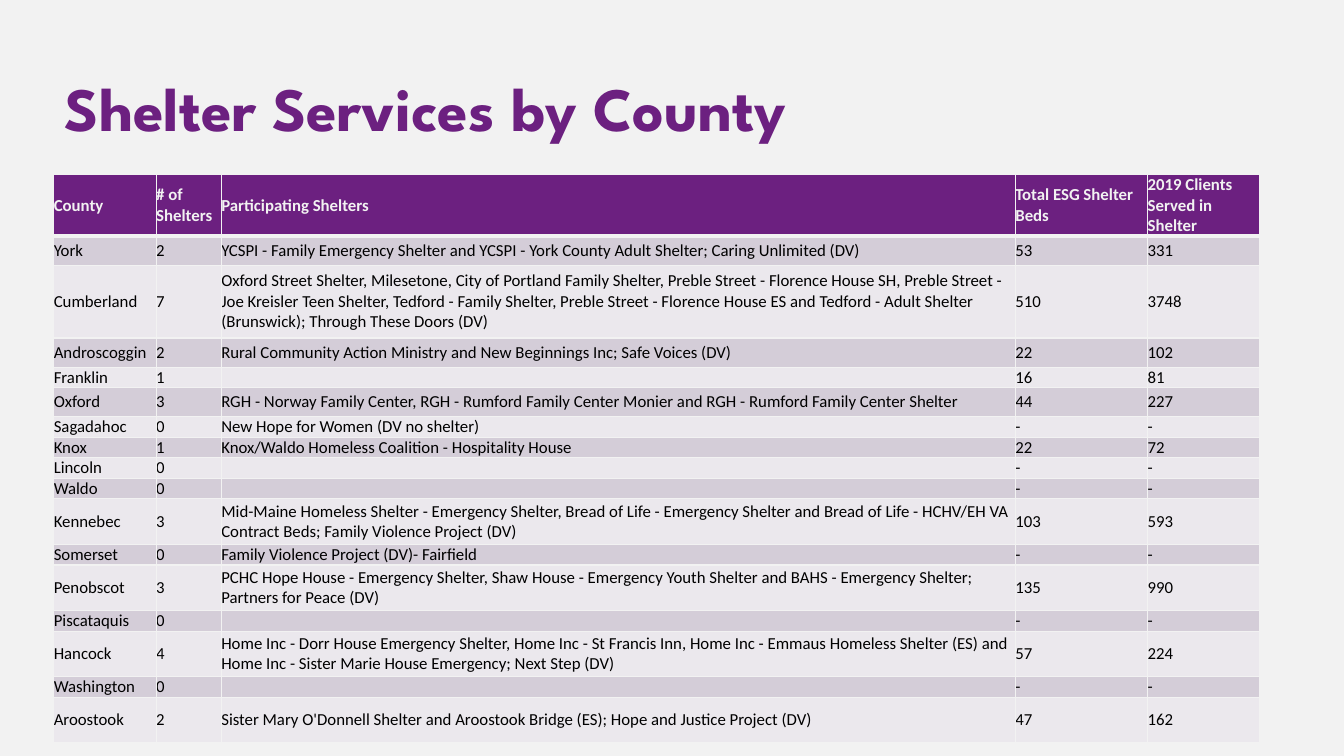
"""Build the slide with the table of shelter services by county."""
from lxml.etree import SubElement as Sub
from pptx import Presentation
from pptx.dml.color import RGBColor as Rgb
from pptx.enum.text import MSO_ANCHOR as Anchor, MSO_AUTO_SIZE as Fit, PP_ALIGN as Align
from pptx.oxml.ns import qn
from pptx.util import Pt

HUES = {"page": "F2F2F2", "plum": "6C2080", "dark": "D4CDD8", "pale": "EBE8ED", "ink": "000000"}
WIDTHS = [73.2, 46.5, 567.2, 94.5, 79.8]
LINE, MID, PAIR = 14.4, 20.8, 32.6
ROWS = [
    (43, "County", "# of Shelters", "Participating Shelters", "Total ESG Shelter Beds",
     "2019 Clients Served in Shelter"),
    (MID, "York", "2", "YCSPI - Family Emergency Shelter and YCSPI - York County Adult Shelter; "
     "Caring Unlimited (DV)", "53", "331"),
    (52, "Cumberland", "7", "Oxford Street Shelter, Milesetone, City of Portland Family Shelter, "
     "Preble Street - Florence House SH, Preble Street - Joe Kreisler Teen Shelter, "
     "Tedford - Family Shelter, Preble Street - Florence House ES and "
     "Tedford - Adult Shelter (Brunswick); Through These Doors (DV)", "510", "3748"),
    (MID, "Androscoggin", "2", "Rural Community Action Ministry and New Beginnings Inc; "
     "Safe Voices (DV)", "22", "102"),
    (LINE, "Franklin", "1", "", "16", "81"),
    (MID, "Oxford", "3", "RGH - Norway Family Center, RGH - Rumford Family Center Monier and "
     "RGH - Rumford Family Center Shelter", "44", "227"),
    (LINE, "Sagadahoc", "0", "New Hope for Women (DV no shelter)", "-", "-"),
    (LINE, "Knox", "1", "Knox/Waldo Homeless Coalition - Hospitality House", "22", "72"),
    (LINE, "Lincoln", "0", "", "-", "-"),
    (LINE, "Waldo", "0", "", "-", "-"),
    (PAIR, "Kennebec", "3", "Mid-Maine Homeless Shelter - Emergency Shelter, "
     "Bread of Life - Emergency Shelter and Bread of Life - HCHV/EH VA Contract Beds; "
     "Family Violence Project (DV)", "103", "593"),
    (LINE, "Somerset", "0", "Family Violence Project (DV)- Fairfield", "-", "-"),
    (PAIR, "Penobscot", "3", "PCHC Hope House - Emergency Shelter, "
     "Shaw House - Emergency Youth Shelter and BAHS - Emergency Shelter; "
     "Partners for Peace (DV)", "135", "990"),
    (LINE, "Piscataquis", "0", "", "-", "-"),
    (PAIR, "Hancock", "4", "Home Inc - Dorr House Emergency Shelter, Home Inc - St Francis Inn, "
     "Home Inc - Emmaus Homeless Shelter (ES) and Home Inc - Sister Marie House Emergency; "
     "Next Step (DV)", "57", "224"),
    (LINE, "Washington", "0", "", "-", "-"),
    (PAIR, "Aroostook", "2", "Sister Mary O'Donnell Shelter and Aroostook Bridge (ES); "
     "Hope and Justice Project (DV)", "47", "162"),
]


def write(par, text, face, size, hue, bold):
    run = par.add_run()
    run.text = text
    run.font.name, run.font.size, run.font.bold = face, Pt(size), bold
    run.font.color.rgb = Rgb.from_string(HUES[hue])


def edge(cell, side, width):
    line = Sub(cell._tc.get_or_add_tcPr(), qn(f"a:ln{side}"), w=str(Pt(width)))
    Sub(Sub(line, qn("a:solidFill")), qn("a:srgbClr"), val=HUES["page"])


deck = Presentation()
deck.slide_width, deck.slide_height = Pt(960), Pt(540)
slide = deck.slides.add_slide(deck.slide_layouts[5])
slide.background.fill.solid()
slide.background.fill.fore_color.rgb = Rgb.from_string(HUES["page"])

title = slide.shapes.title
title.left, title.top, title.width, title.height = Pt(39), Pt(46), Pt(846), Pt(60.5)
frame = title.text_frame
frame.auto_size, frame.word_wrap = Fit.NONE, True
frame.vertical_anchor = Anchor.MIDDLE
frame.paragraphs[0].alignment = Align.LEFT
write(frame.paragraphs[0], "Shelter Services by County", "League Spartan", 44, "plum", True)

total = sum(row[0] for row in ROWS)
grid = slide.shapes.add_table(
    len(ROWS), len(WIDTHS), Pt(38.4), Pt(124.8), Pt(sum(WIDTHS)), Pt(total)).table
for col, width in zip(grid.columns, WIDTHS):
    col.width = Pt(width)

for r, (height, *texts) in enumerate(ROWS):
    grid.rows[r].height = Pt(height)
    head = r == 0
    fill = "plum" if head else "dark" if r % 2 else "pale"
    for c, text in enumerate(texts):
        cell = grid.cell(r, c)
        cell.margin_left = cell.margin_right = cell.margin_top = cell.margin_bottom = 0
        cell.vertical_anchor = Anchor.MIDDLE
        for side in "LRTB":
            thick = (r, side) in [(0, "B"), (1, "T")]
            edge(cell, side, 3 if thick else 1)
        cell.fill.solid()
        cell.fill.fore_color.rgb = Rgb.from_string(HUES[fill])
        par = cell.text_frame.paragraphs[0]
        if text:
            write(par, text, "Calibri", 12, "page" if head else "ink", head)
        else:
            Sub(par._p, qn("a:endParaRPr"), sz="1200")

deck.save("out.pptx")
